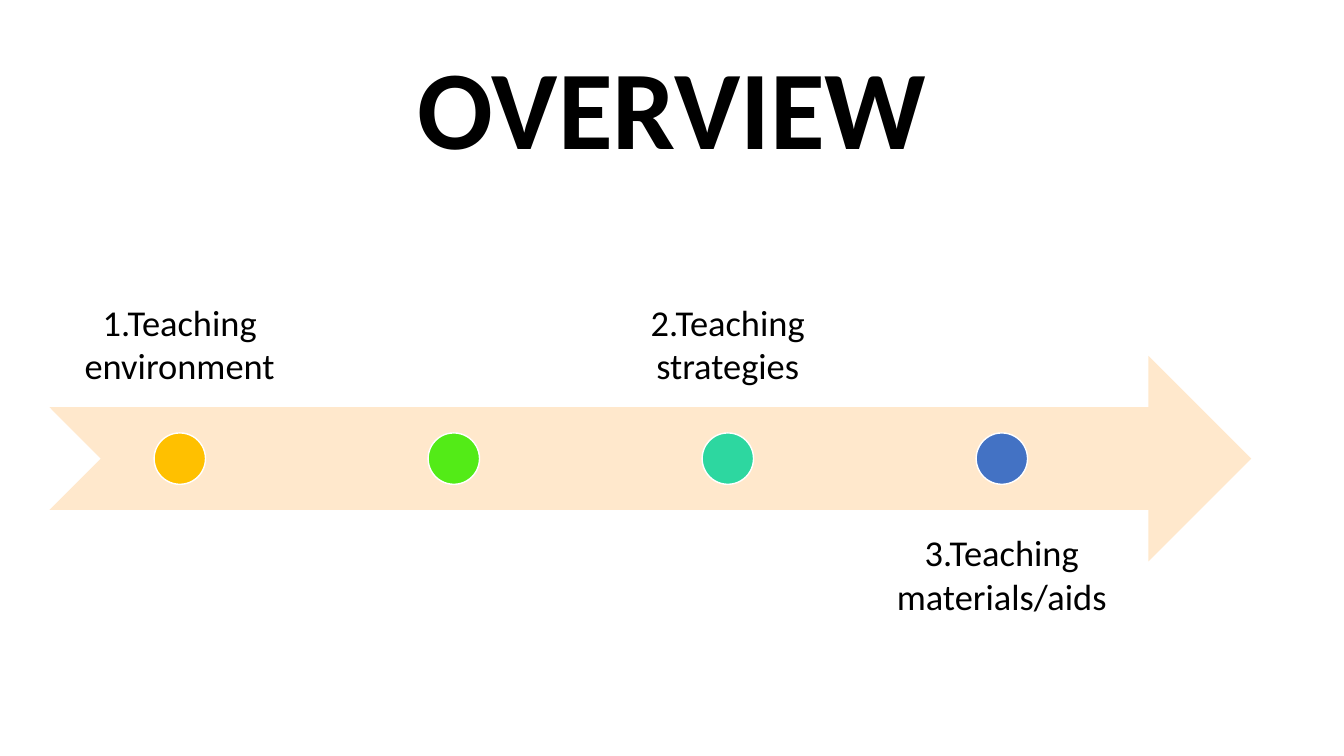
from pptx import Presentation
from pptx.dml.color import RGBColor
from pptx.enum.shapes import MSO_SHAPE
from pptx.enum.text import MSO_ANCHOR, PP_ALIGN
from pptx.util import Inches, Pt

COLORS = {
    "text": "000000",
    "arrow": "FFE8CC",
    "outline": "FFFFFF",
    "amber": "FFC000",
    "green": "53EB17",
    "teal": "2DD7A0",
    "blue": "4372C4",
}

# Milestones in order: dot colour, label, whether the label is above the arrow
MILESTONES = [
    ("amber", "1.Teaching environment", True),
    ("green", "", True),
    ("teal", "2.Teaching strategies", True),
    ("blue", "3.Teaching materials/aids", False),
]


def color(name):
    return RGBColor.from_string(COLORS[name])


def add_text(slide, box, text, size, bold=False, anchor=MSO_ANCHOR.MIDDLE,
             inset=None, spacing=None):
    frame = slide.shapes.add_textbox(*map(Inches, box)).text_frame
    frame.word_wrap = True
    frame.vertical_anchor = anchor
    if inset is not None:
        frame.margin_left = frame.margin_right = Inches(inset)
        frame.margin_top = frame.margin_bottom = Inches(inset)
    line = frame.paragraphs[0]
    line.alignment = PP_ALIGN.CENTER
    line.line_spacing = spacing
    words = line.add_run()
    words.text = text
    words.font.name = "Calibri"
    words.font.size = Pt(size)
    words.font.bold = bold
    words.font.color.rgb = color("text")


def add_filled(slide, kind, box, fill, outline=None):
    shape = slide.shapes.add_shape(kind, *map(Inches, box))
    shape.shadow.inherit = False
    shape.fill.solid()
    shape.fill.fore_color.rgb = color(fill)
    if outline:
        shape.line.color.rgb = color(outline)
        shape.line.width = Pt(1)
    else:
        shape.line.fill.background()


def add_title(slide, box):
    add_text(slide, box, "OVERVIEW", 80, bold=True, spacing=0.9)


def add_timeline(slide, box):
    left, top, width, height = box
    band = height * 0.4            # height of the arrow and of each label row
    arrow_top = top + height * 0.3
    lower_top = top + height * 0.6
    pitch = width * 0.228          # distance between milestones
    label_width = width * 0.217
    dot = band / 4

    # Arrow
    add_filled(slide, MSO_SHAPE.NOTCHED_RIGHT_ARROW,
               (left, arrow_top, width, band), "arrow")

    # Milestones with their labels
    for index, (fill, label, above) in enumerate(MILESTONES):
        label_left = left + index * pitch
        if label:
            add_text(slide,
                     (label_left, top if above else lower_top, label_width, band),
                     label, 26, inset=0.2,
                     anchor=MSO_ANCHOR.BOTTOM if above else MSO_ANCHOR.TOP)
        add_filled(slide, MSO_SHAPE.OVAL,
                   (label_left + (label_width - dot) / 2,
                    arrow_top + (band - dot) / 2, dot, dot),
                   fill, "outline")


def main():
    deck = Presentation()
    deck.slide_width = Inches(13.33)
    deck.slide_height = Inches(7.5)
    slide = deck.slides.add_slide(deck.slide_layouts[6])
    add_title(slide, (0.92, 0.4, 11.5, 1.45))
    add_timeline(slide, (0.49, 2, 11.92, 5.1))
    deck.save("out.pptx")


if __name__ == "__main__":
    main()
